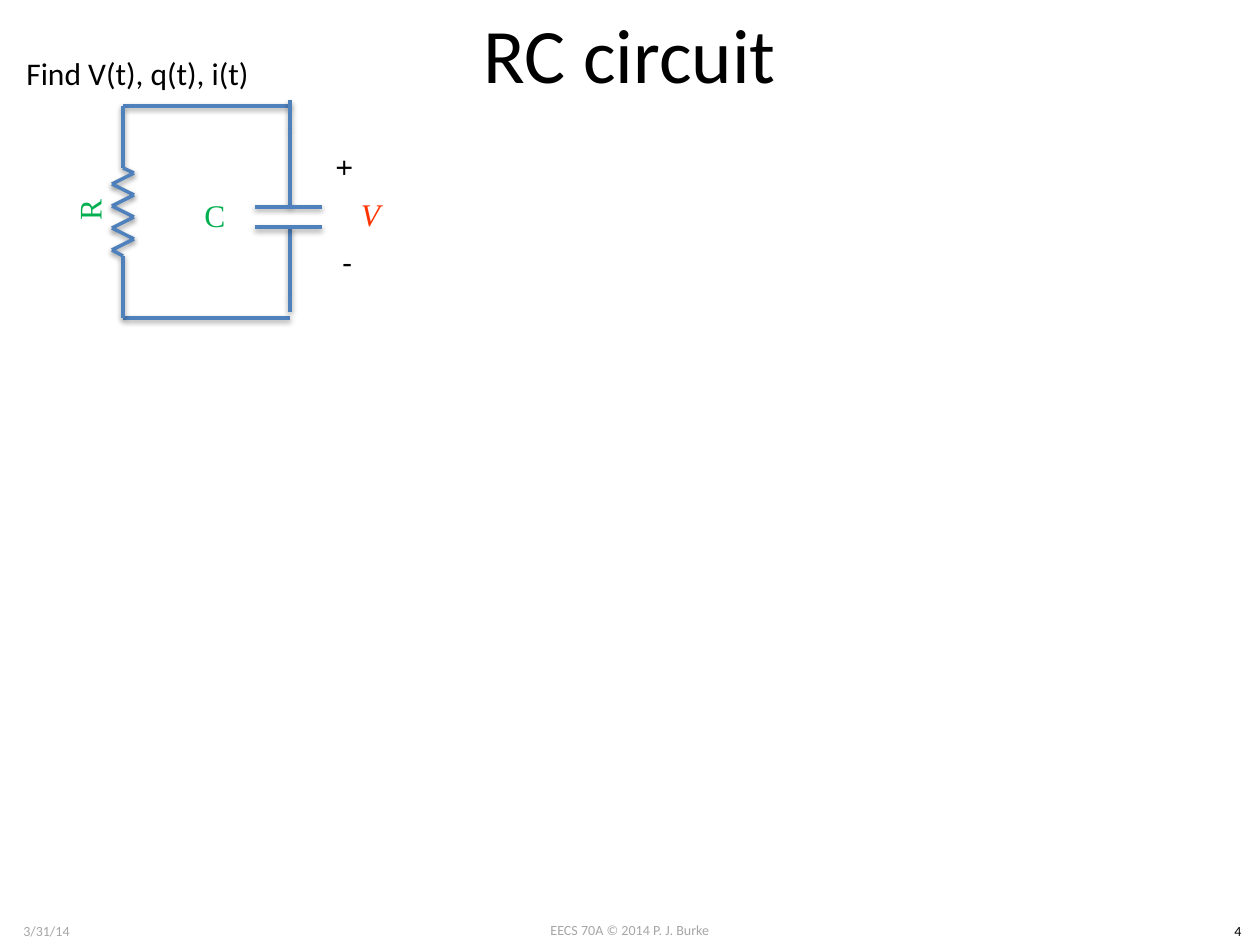
import itertools
import pptx
import pptx.dml.color
import pptx.enum.shapes
import pptx.enum.text
import pptx.oxml
import pptx.util

PX = 914400 / 126
BLUE, GREEN, RED, GREY, BLACK = "4F81BD", "00B050", "FF3300", "A6A6A6", "000000"
SERIF = "Times New Roman"
SHADOW = (
    '<a:effectLst xmlns:a="http://schemas.openxmlformats.org/drawingml/2006/main">'
    '<a:outerShdw blurRad="40000" dist="20000" dir="5400000" rotWithShape="0">'
    '<a:srgbClr val="000000"><a:alpha val="38000"/></a:srgbClr>'
    '</a:outerShdw></a:effectLst>'
)


def emu(*px):
    return [round(n * PX) for n in px]


def color(code):
    return pptx.dml.color.RGBColor.from_string(code)


def label(shapes, text, box, size=18, hue=BLACK, face="Calibri",
          mid=False, center=True, wrap=True, turn=0):
    item = shapes.add_textbox(*emu(*box))
    item.rotation = turn
    frame = item.text_frame
    frame.word_wrap = wrap
    anchor = pptx.enum.text.MSO_ANCHOR
    frame.vertical_anchor = anchor.MIDDLE if mid else anchor.TOP
    para = frame.paragraphs[0]
    para.text = text
    align = pptx.enum.text.PP_ALIGN
    para.alignment = align.CENTER if center else align.LEFT
    para.font.size = pptx.util.Pt(size)
    para.font.name = face
    para.font.color.rgb = color(hue)
    return para


def wire(shapes, *points):
    """Join each point to the next with a shadowed line."""
    for start, end in itertools.pairwise(points):
        line = shapes.add_connector(
            pptx.enum.shapes.MSO_CONNECTOR.STRAIGHT, *emu(*start, *end))
        line.line.color.rgb = color(BLUE)
        line.line.width = pptx.util.Pt(2)
        line._element.spPr.append(pptx.oxml.parse_xml(SHADOW))


def resistor(shapes, x, y, height):
    """Draw the resistor and its leads downward from (x, y)."""
    step, half = 11, 11
    top = y + (height - 8 * step) // 2
    low = top + 8 * step
    turns = [(x + (half if n % 2 == 0 else -half), top + 5 + n * step)
             for n in range(8)]
    label(shapes, "R", (x - 109, y + 58, 150, 92), hue=GREEN, face=SERIF,
          mid=True, turn=270)
    wire(shapes, (x, y), (x, top), *turns, (x, low), (x, y + height))


def capacitor(shapes, x, y, height):
    """Draw the capacitor, its leads and its voltage around the line x."""
    plates = y + 101, y + 121
    wire(shapes, (x, y - 6), (x, y + 23), (x, plates[0]))
    wire(shapes, (x, plates[1]), (x, y + 189), (x, y + height - 6))
    for level in plates:
        wire(shapes, (x + 32, level), (x - 35, level))
    label(shapes, "C", (x - 150, y + 63, 150, 92), hue=GREEN, face=SERIF, mid=True)
    volt = label(shapes, "V", (x + 32, y + 69, 97, 77), hue=RED, face=SERIF, mid=True)
    volt.font.italic = True
    label(shapes, "+", (x + 36, y + 38, 42, 50), center=False, wrap=False, turn=90)
    label(shapes, "-", (x + 40, y + 131, 35, 50), center=False, wrap=False)


def circuit(slide, x, y, width, height):
    for level in (y, y + height):
        wire(slide.shapes, (x, level), (x + width, level))
    capacitor(slide.shapes.add_group_shape().shapes, x + width, y, height)
    resistor(slide.shapes.add_group_shape().shapes, x, y, height)


def footer(slide, x, y, width, height):
    parts = (
        ("EECS 70A © 2014 P. J. Burke", 483, 0, 294, GREY),
        ("3/31/14", 0, 1, 93, GREY),
        ("4", width - 44, 1, 44, BLACK),
    )
    for text, left, drop, span, hue in parts:
        label(slide.shapes, text, (x + left, y + drop, span, height), 8, hue)


def main():
    deck = pptx.Presentation()
    deck.slide_width, deck.slide_height = emu(1260, 945)
    slide = deck.slides.add_slide(deck.slide_layouts[6])
    footer(slide, 0, 915, 1260, 30)
    label(slide.shapes, "Find V(t), q(t), i(t)", (14, 48, 251, 50),
          center=False, wrap=False)
    circuit(slide, 123, 106, 167, 212)
    label(slide.shapes, "RC circuit", (63, 0, 1134, 158), 44)
    deck.save("out.pptx")


if __name__ == "__main__":
    main()
